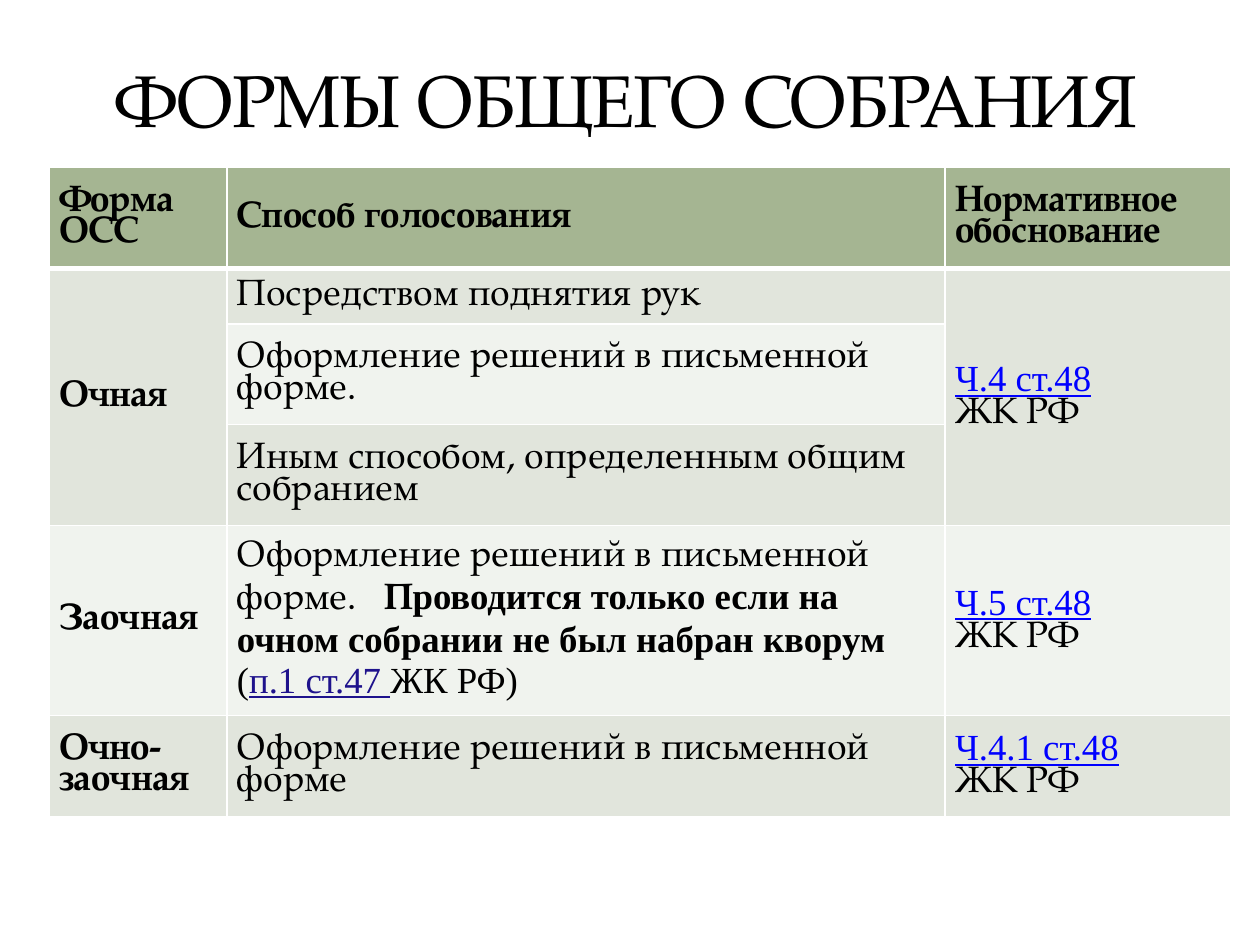
"""Build a slide with a table of the forms of a general meeting of owners."""
import pptx
import pptx.dml.color
import pptx.enum.text
import pptx.oxml
import pptx.oxml.ns
import pptx.util

Inches = pptx.util.Inches
RGBColor = pptx.dml.color.RGBColor

BLACK = RGBColor(0x00, 0x00, 0x00)
BLUE = RGBColor(0x00, 0x00, 0xFF)
INDIGO = RGBColor(0x1E, 0x12, 0x8C)
HEADER_GREEN = RGBColor(0xA5, 0xB5, 0x92)
BANDS = (RGBColor(0xE1, 0xE5, 0xDC), RGBColor(0xF0, 0xF3, 0xEE))
SERIF = "TeX Gyre Pagella"
TIMES = "Times New Roman"

STYLES = {
    "plain": (SERIF, False, BLACK, False),
    "bold": (SERIF, True, BLACK, False),
    "times": (TIMES, False, BLACK, False),
    "times bold": (TIMES, True, BLACK, False),
    "link": (TIMES, False, BLUE, True),
    "inner link": (TIMES, False, INDIGO, True),
}

TITLE = "ФОРМЫ ОБЩЕГО СОБРАНИЯ"
COLUMN_WIDTHS = (1.41, 5.7, 2.27)
ROW_HEIGHTS = (0.8, 0.44, 0.8, 0.8, 1.51, 0.8)


def lines(style, *texts):
    return [[(text, style)] for text in texts]


def reference(article):
    return lines("link", article) + lines("plain", "ЖК РФ")


ABSENTEE_METHOD = [
    [
        ("Оформление решений в письменной форме.   ", "plain"),
        ("П", "bold"),
        ("роводится только если на очном собрании не был набран кворум", "times bold"),
    ],
    [("(", "times"), ("п.1 ст.47 ", "inner link"), ("ЖК РФ)", "times")],
]
ROWS = [
    [lines("bold", "Форма", "ОСС"), lines("bold", "Способ голосования"),
     lines("bold", "Нормативное обоснование")],
    [lines("bold", "Очная"), lines("plain", "Посредством поднятия рук"), reference("Ч.4 ст.48")],
    [None, lines("plain", "Оформление решений в письменной форме."), None],
    [None, lines("plain", "Иным способом, определенным общим собранием"), None],
    [lines("bold", "Заочная"), ABSENTEE_METHOD, reference("Ч.5 ст.48")],
    [lines("bold", "Очно-заочная"), lines("plain", "Оформление решений в письменной форме"),
     reference("Ч.4.1 ст.48")],
]
MERGED_ROWS = (1, 3)
MERGED_COLUMNS = (0, 2)


def set_borders(cell, bottom_width):
    properties = cell._tc.get_or_add_tcPr()
    widths = {"lnL": 1, "lnR": 1, "lnT": 1, "lnB": bottom_width}
    for position, (side, width) in enumerate(widths.items()):
        border = pptx.oxml.parse_xml(
            f'<a:{side} {pptx.oxml.ns.nsdecls("a")} w="{pptx.util.Pt(width)}">'
            '<a:solidFill><a:srgbClr val="FFFFFF"/></a:solidFill>'
            f'</a:{side}>'
        )
        properties.insert(position, border)


def write_cell(cell, content):
    cell.vertical_anchor = pptx.enum.text.MSO_ANCHOR.MIDDLE
    cell.margin_left = cell.margin_right = Inches(0.08)
    cell.margin_top = cell.margin_bottom = Inches(0.04)
    for index, pieces in enumerate(content):
        frame = cell.text_frame
        paragraph = frame.paragraphs[0] if index == 0 else frame.add_paragraph()
        paragraph.line_spacing = 1.0 if content is ABSENTEE_METHOD else 0.85
        for text, style in pieces:
            run = paragraph.add_run()
            run.text = text
            font = run.font
            font.size = pptx.util.Pt(21)
            font.name, font.bold, font.color.rgb, font.underline = STYLES[style]


def add_title(slide):
    title = slide.shapes.title
    title.left, title.top = Inches(0.47), Inches(0.16)
    title.width, title.height = Inches(9), Inches(1.02)
    frame = title.text_frame
    frame.text = TITLE
    frame.vertical_anchor = pptx.enum.text.MSO_ANCHOR.BOTTOM
    paragraph = frame.paragraphs[0]
    paragraph.alignment = pptx.enum.text.PP_ALIGN.CENTER
    font = paragraph.runs[0].font
    font.name, font.size, font.color.rgb = SERIF, pptx.util.Pt(42), BLACK
    paragraph.runs[0]._r.get_or_add_rPr().set("spc", "-100")


def add_forms_table(slide):
    table = slide.shapes.add_table(
        len(ROWS), len(COLUMN_WIDTHS), Inches(0.39), Inches(1.33),
        Inches(sum(COLUMN_WIDTHS)), Inches(sum(ROW_HEIGHTS)),
    ).table
    for column, width in zip(table.columns, COLUMN_WIDTHS):
        column.width = Inches(width)
    for row_index, contents in enumerate(ROWS):
        table.rows[row_index].height = Inches(ROW_HEIGHTS[row_index])
        is_header = row_index == 0
        for column_index, content in enumerate(contents):
            cell = table.cell(row_index, column_index)
            cell.fill.solid()
            cell.fill.fore_color.rgb = HEADER_GREEN if is_header else BANDS[(row_index - 1) % 2]
            set_borders(cell, 3 if is_header else 1)
            if content:
                write_cell(cell, content)
    first, last = MERGED_ROWS
    for column_index in MERGED_COLUMNS:
        table.cell(first, column_index).merge(table.cell(last, column_index))


def main():
    presentation = pptx.Presentation()
    presentation.slide_width, presentation.slide_height = Inches(10), Inches(7.5)
    slide = presentation.slides.add_slide(presentation.slide_layouts[5])
    add_title(slide)
    add_forms_table(slide)
    presentation.save("out.pptx")


if __name__ == "__main__":
    main()
